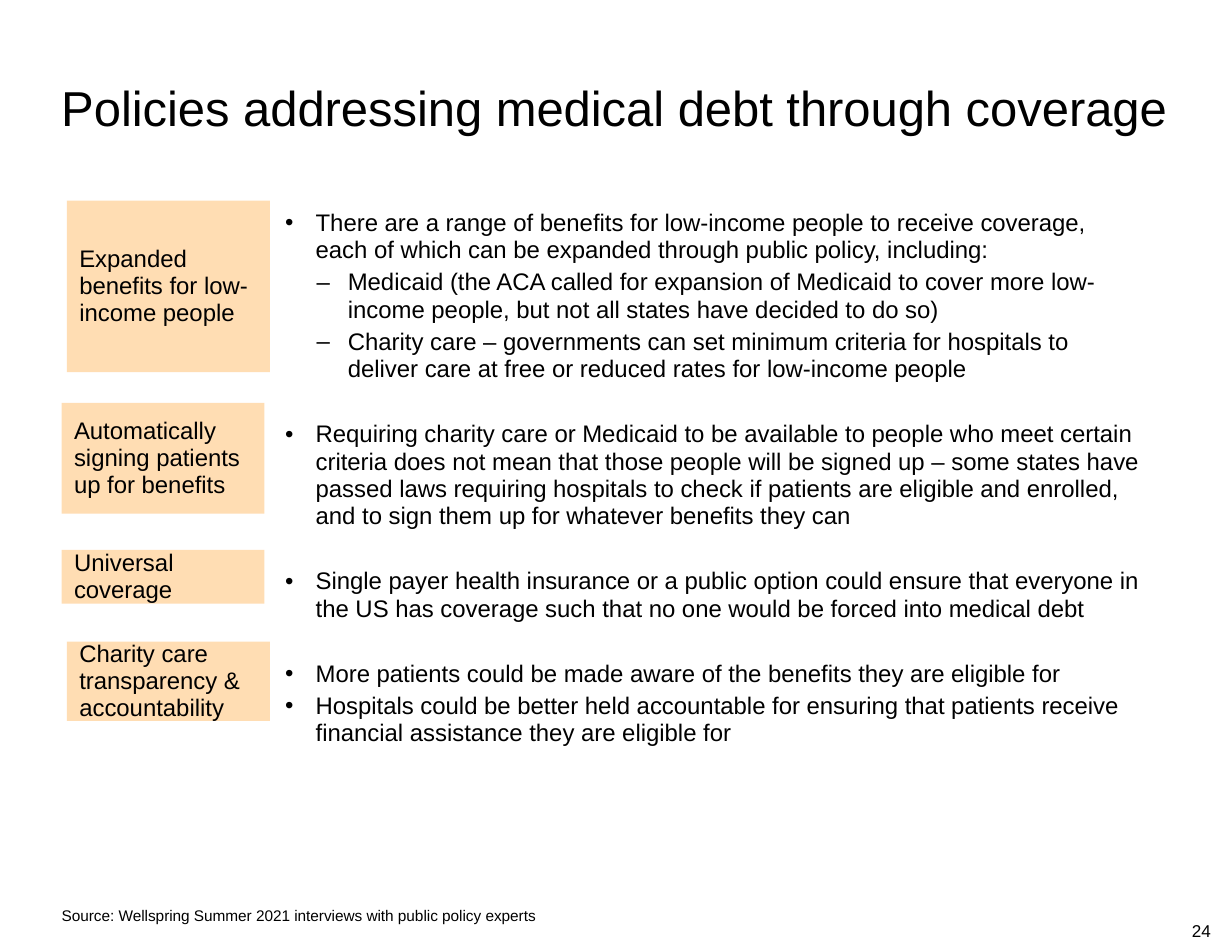
"""Build a slide on policies that address medical debt through coverage."""
from lxml import etree
from pptx import Presentation
from pptx import util as u
from pptx.dml.color import RGBColor
from pptx.enum import shapes, text
from pptx.oxml.ns import qn

BLACK = RGBColor(0x00, 0x00, 0x00)
PEACH = RGBColor(0xFF, 0xDD, 0xB3)
FONT = "Arial"
BODY_SIZE = 15.4
SECTION_GAP = 24.2
ITEM_GAP = 3.3


def write(box, words, size=BODY_SIZE, spacing=None, before=0, bullet=None,
          left=0, hanging=0, anchor=text.MSO_ANCHOR.TOP, insets=(0, 0), wrap=True):
    frame = box.text_frame
    frame.word_wrap = wrap
    frame.vertical_anchor = anchor
    frame.margin_left = frame.margin_right = u.Cm(insets[0])
    frame.margin_top = frame.margin_bottom = u.Cm(insets[1])
    para = frame.add_paragraph() if frame.text else frame.paragraphs[0]
    para.alignment = text.PP_ALIGN.LEFT
    para.space_before = u.Pt(before)
    if spacing:
        para.line_spacing = spacing
    if bullet:
        properties = para._p.get_or_add_pPr()
        properties.set("marL", str(u.Cm(left)))
        properties.set("indent", str(-u.Cm(hanging)))
        etree.SubElement(properties, qn("a:buFont")).set("typeface", FONT)
        etree.SubElement(properties, qn("a:buChar")).set("char", bullet)
    span = para.add_run()
    span.text = words
    span.font.name = FONT
    span.font.size = u.Pt(size)
    span.font.color.rgb = BLACK


deck = Presentation()
deck.slide_width = u.Cm(27.94)
deck.slide_height = u.Cm(21.59)
page = deck.slides.add_slide(deck.slide_layouts[6])

title = page.shapes.add_textbox(u.Cm(1.09), u.Cm(1.5), u.Cm(25.88), u.Cm(2.51))
write(title, "Policies addressing medical debt through coverage", size=31.5,
      insets=(0.3, 0.25))

labels = [
    ("Expanded benefits for low-income people", 1.52, 4.55, 3.89),
    ("Automatically signing patients up for benefits", 1.4, 9.14, 2.51),
    ("Universal coverage", 1.4, 12.47, 1.22),
    ("Charity care transparency & accountability", 1.52, 14.55, 1.8),
]
for words, left, top, height in labels:
    label = page.shapes.add_shape(shapes.MSO_SHAPE.RECTANGLE, u.Cm(left), u.Cm(top),
                                  u.Cm(4.6), u.Cm(height))
    label.shadow.inherit = False
    label.fill.solid()
    label.fill.fore_color.rgb = PEACH
    label.line.fill.background()
    write(label, words, spacing=0.95, anchor=text.MSO_ANCHOR.MIDDLE, insets=(0.28, 0.15))

sections = [
    [
        ("•", "There are a range of benefits for low-income people to receive coverage, "
              "each of which can be expanded through public policy, including:"),
        ("–", "Medicaid (the ACA called for expansion of Medicaid to cover more low-income "
              "people, but not all states have decided to do so)"),
        ("–", "Charity care – governments can set minimum criteria for hospitals to deliver "
              "care at free or reduced rates for low-income people"),
    ],
    [
        ("•", "Requiring charity care or Medicaid to be available to people who meet certain "
              "criteria does not mean that those people will be signed up – some states have "
              "passed laws requiring hospitals to check if patients are eligible and enrolled, "
              "and to sign them up for whatever benefits they can"),
    ],
    [
        ("•", "Single payer health insurance or a public option could ensure that everyone in "
              "the US has coverage such that no one would be forced into medical debt"),
    ],
    [
        ("•", "More patients could be made aware of the benefits they are eligible for"),
        ("•", "Hospitals could be better held accountable for ensuring that patients receive "
              "financial assistance they are eligible for"),
    ],
]
indents = {"•": (0.69, 0.69), "–": (1.42, 0.71)}
details = page.shapes.add_textbox(u.Cm(6.22), u.Cm(4.62), u.Cm(19.94), u.Cm(12.47))
before = 0
for section in sections:
    for bullet, words in section:
        left, hanging = indents[bullet]
        write(details, words, spacing=0.95, before=before, bullet=bullet,
              left=left, hanging=hanging, insets=(0.25, 0.13))
        before = ITEM_GAP
    before = SECTION_GAP

source = page.shapes.add_textbox(u.Cm(1.4), u.Cm(20.55), u.Cm(11.68), u.Cm(0.43))
write(source, "Source: Wellspring Summer 2021 interviews with public policy experts",
      size=9.9, anchor=text.MSO_ANCHOR.BOTTOM)

number = page.shapes.add_textbox(u.Cm(27.03), u.Cm(20.85), u.Cm(0.48), u.Cm(0.48))
write(number, "24", size=11, anchor=text.MSO_ANCHOR.BOTTOM, wrap=False)

deck.save("out.pptx")
